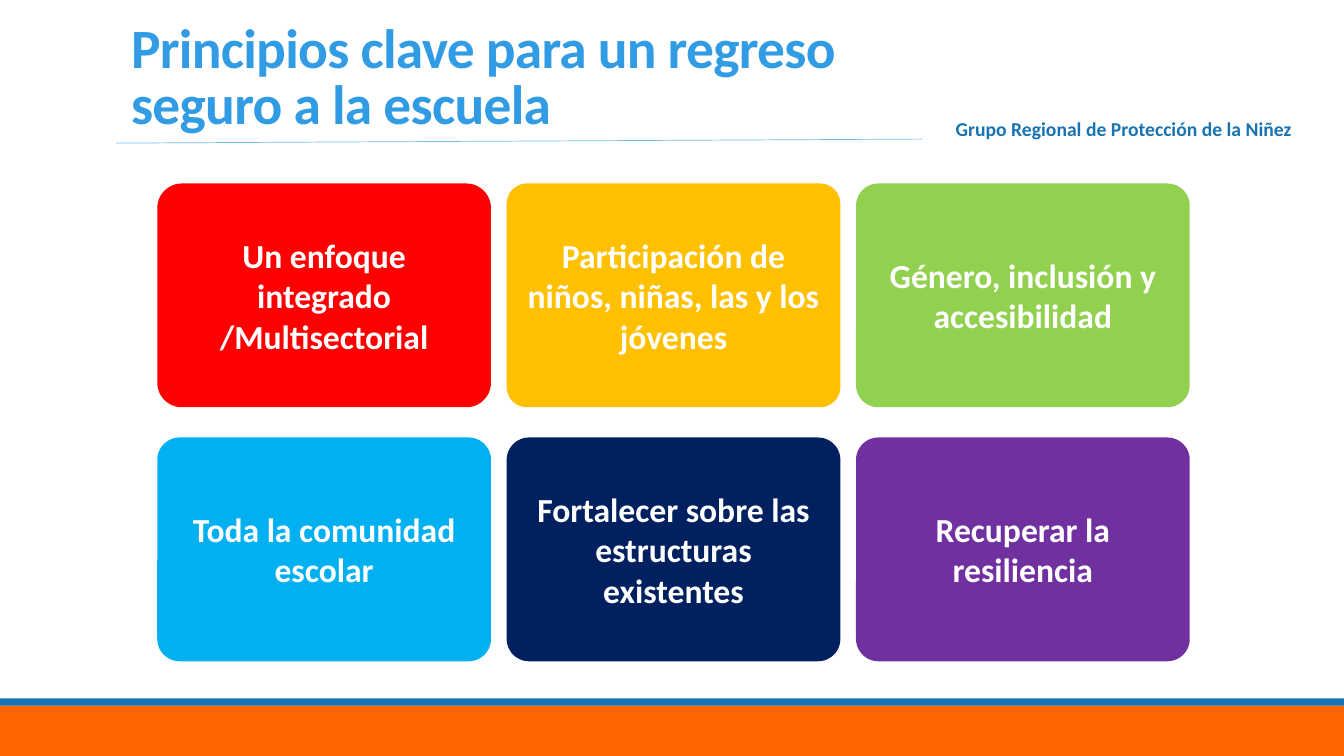
from pptx import Presentation
from pptx.dml.color import RGBColor
from pptx.enum.shapes import MSO_CONNECTOR, MSO_SHAPE
from pptx.enum.text import MSO_ANCHOR, MSO_AUTO_SIZE, PP_ALIGN
from pptx.oxml.ns import qn
from pptx.util import Inches, Pt
from lxml import etree

RECT, ROUNDED = MSO_SHAPE.RECTANGLE, MSO_SHAPE.ROUNDED_RECTANGLE
STRAIGHT = MSO_CONNECTOR.STRAIGHT
LEFT, CENTER = PP_ALIGN.LEFT, PP_ALIGN.CENTER
MIDDLE, BOTTOM = MSO_ANCHOR.MIDDLE, MSO_ANCHOR.BOTTOM
NO_FIT, GROW = MSO_AUTO_SIZE.NONE, MSO_AUTO_SIZE.SHAPE_TO_FIT_TEXT

TITLE = "Principios clave para un regreso seguro a la escuela"
GROUP = "Grupo Regional de Protección de la Niñez"
PRINCIPLES = [
    (["Un enfoque integrado", "/Multisectorial"], "FF0000", 0.11),
    (["Participación de niños, niñas, las y los jóvenes"], "FFC000", 0.09),
    (["Género, inclusión y accesibilidad"], "92D050", 0.1),
    (["Toda la comunidad escolar"], "00B0F0", 0.1),
    (["Fortalecer sobre las estructuras existentes"], "002060", 0.1),
    (["Recuperar la resiliencia"], "7030A0", 0.1),
]
BANDS = [(7, 0.5, "FF6600"), (6.93, 0.07, "1773B1")]

SLIDE_W, SLIDE_H = 13.33, 7.5
COLUMNS = 3
GRID_X, GRID_Y = 1.56, 1.82
CARD_W, CARD_H = 3.31, 2.22
STEP_X, STEP_Y = 3.465, 2.52


def color(value):
    return RGBColor.from_string(value)


def write(sp, lines, size, ink, align, **frame):
    tf = sp.text_frame
    for name, value in frame.items():
        setattr(tf, name, value)
    for i, line in enumerate(lines):
        p = tf.paragraphs[0] if i == 0 else tf.add_paragraph()
        p.alignment = align
        r = p.add_run()
        r.text = line
        style = {"name": "Calibri", "size": Pt(size), "bold": True}
        for name, value in style.items():
            setattr(r.font, name, value)
        r.font.color.rgb = color(ink)
    return tf


def add_block(slide, kind, box, fill):
    sp = slide.shapes.add_shape(kind, *map(Inches, box))
    sp.shadow.inherit = False
    sp.fill.solid()
    sp.fill.fore_color.rgb = color(fill)
    sp.line.fill.background()
    return sp


def main():
    prs = Presentation()
    prs.slide_width, prs.slide_height = Inches(SLIDE_W), Inches(SLIDE_H)
    slide = prs.slides.add_slide(prs.slide_layouts[5])

    for top, height, fill in BANDS:
        add_block(slide, RECT, (0, top, SLIDE_W, height), fill)

    rule = slide.shapes.add_connector(
        STRAIGHT, Inches(1.15), Inches(1.42), Inches(9.15), Inches(1.38))
    rule.line.color.rgb = color("76BDED")
    rule.line.width = Pt(0.5)
    etree.SubElement(rule._element.spPr, qn("a:effectLst"))

    label = slide.shapes.add_textbox(
        Inches(9.38), Inches(1.11), Inches(3.56), Inches(0.34))
    write(label, [GROUP], 14, "1773B1", LEFT, word_wrap=False, auto_size=GROW)

    title = slide.shapes.title
    title.left, title.top = Inches(1.2), Inches(0.31)
    title.width, title.height = Inches(7.31), Inches(1.09)
    tf = write(title, [TITLE], 39.6, "319CE4", LEFT, word_wrap=True,
               auto_size=NO_FIT, vertical_anchor=BOTTOM)
    p = tf.paragraphs[0]
    p.line_spacing = 0.85
    p.runs[0]._r.get_or_add_rPr().set("spc", "-50")

    for i, (lines, fill, corner) in enumerate(PRINCIPLES):
        row, column = divmod(i, COLUMNS)
        box = (GRID_X + column * STEP_X, GRID_Y + row * STEP_Y, CARD_W, CARD_H)
        card = add_block(slide, ROUNDED, box, fill)
        card.adjustments[0] = corner
        write(card, lines, 24, "FFFFFF", CENTER, word_wrap=True,
              vertical_anchor=MIDDLE)

    prs.save("out.pptx")


if __name__ == "__main__":
    main()
